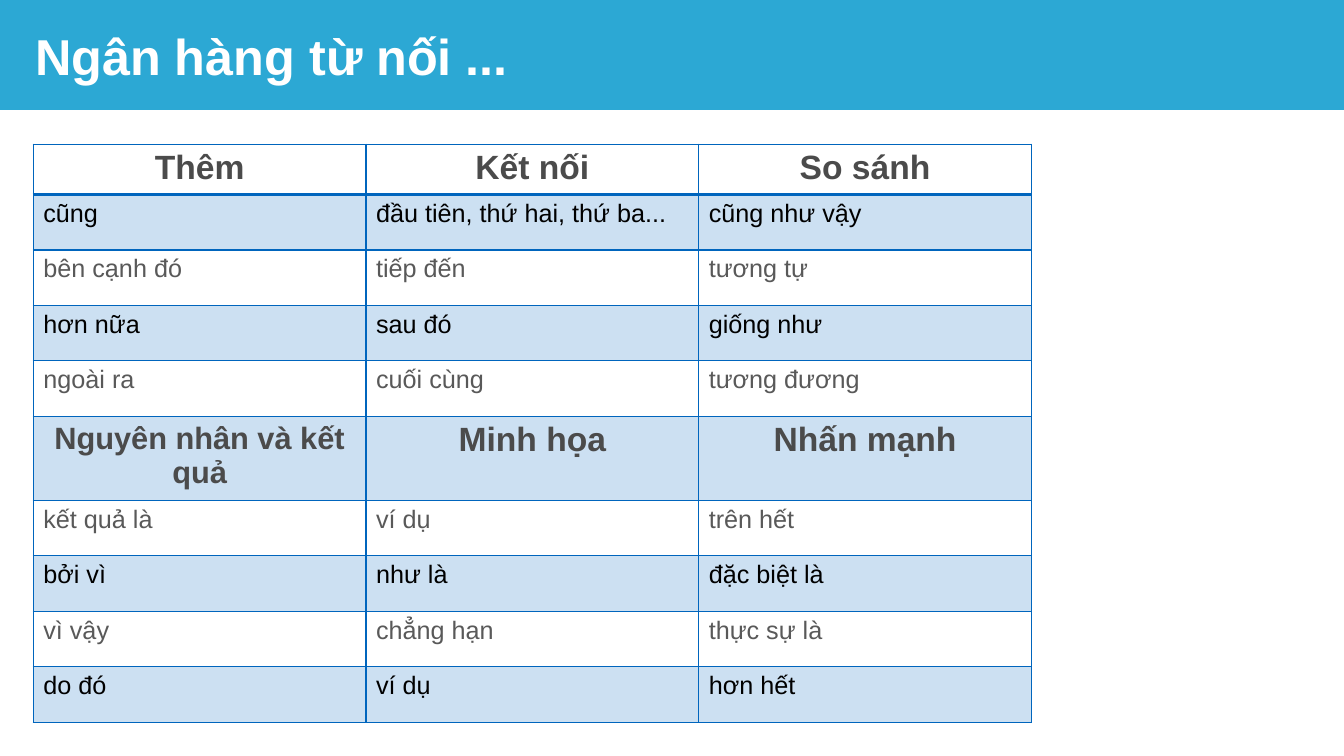
from lxml import etree
from pptx import Presentation
from pptx.dml.color import RGBColor
from pptx.enum.shapes import MSO_SHAPE
from pptx.enum.text import MSO_ANCHOR, PP_ALIGN
from pptx.oxml.ns import qn
from pptx.util import Inches, Pt

RECTANGLE = MSO_SHAPE.RECTANGLE
MIDDLE = MSO_ANCHOR.MIDDLE
LEFT, CENTER = PP_ALIGN.LEFT, PP_ALIGN.CENTER

SLIDE_W, SLIDE_H = 13.33, 7.5
BANNER_H = 1.09
TABLE_LEFT, TABLE_TOP, COLUMN_W = 0.33, 1.43, 3.3
TOP_HEADING_H, WORD_H, MIDDLE_HEADING_H = 0.47, 0.55, 0.78

COLORS = {
    "banner": "2CA8D4",
    "title": "FFFFFF",
    "heading": "4B4B4B",
    "word": "595959",
    "band_word": "000000",
    "band": "CCE0F2",
    "border": "0065BD",
}

WORD_BANK = [
    ["Thêm", "Kết nối", "So sánh"],
    ["cũng", "đầu tiên, thứ hai, thứ ba...", "cũng như vậy"],
    ["bên cạnh đó", "tiếp đến", "tương tự"],
    ["hơn nữa", "sau đó", "giống như"],
    ["ngoài ra", "cuối cùng", "tương đương"],
    ["Nguyên nhân và kết quả", "Minh họa", "Nhấn mạnh"],
    ["kết quả là", "ví dụ", "trên hết"],
    ["bởi vì", "như là", "đặc biệt là"],
    ["vì vậy", "chẳng hạn", "thực sự là"],
    ["do đó", "ví dụ", "hơn hết"],
]
HEADING_HEIGHTS = {0: TOP_HEADING_H, 5: MIDDLE_HEADING_H}
LONG_HEADING = "Nguyên nhân và kết quả"


def rgb(name):
    return RGBColor.from_string(COLORS[name])


def write(frame, text, size=18, color="word", bold=False, align=LEFT):
    frame.word_wrap = True
    paragraph = frame.paragraphs[0]
    paragraph.alignment = align
    run = paragraph.add_run()
    run.text = text
    run.font.name = "Arial"
    run.font.size = Pt(size)
    run.font.bold = bold
    run.font.color.rgb = rgb(color)


def add_banner(slide):
    banner = slide.shapes.add_shape(
        RECTANGLE, 0, 0, Inches(SLIDE_W), Inches(BANNER_H))
    banner.shadow.inherit = False
    banner.fill.solid()
    banner.fill.fore_color.rgb = rgb("banner")
    banner.line.fill.background()


def add_title(slide, text):
    title = slide.shapes.add_textbox(
        Inches(0.25), Inches(0.12), Inches(12.93), Inches(0.85))
    title.text_frame.vertical_anchor = MIDDLE
    write(title.text_frame, text, size=36, color="title", bold=True)


def set_borders(cell, bottom_width):
    properties = cell._tc.get_or_add_tcPr()
    widths = {"a:lnL": 1, "a:lnR": 1, "a:lnT": 1, "a:lnB": bottom_width}
    # Border elements must come before the cell fill
    for position, (side, width) in enumerate(widths.items()):
        border = etree.Element(qn(side), w=str(Pt(width)))
        fill = etree.SubElement(border, qn("a:solidFill"))
        etree.SubElement(fill, qn("a:srgbClr"), val=COLORS["border"])
        properties.insert(position, border)


def fill_cell(cell, text, is_heading, is_band):
    if is_band:
        cell.fill.solid()
        cell.fill.fore_color.rgb = rgb("band")
    else:
        cell.fill.background()
    if is_heading:
        size = 22 if text == LONG_HEADING else 24
        write(cell.text_frame, text, size=size, color="heading",
              bold=True, align=CENTER)
    else:
        write(cell.text_frame, text, color="band_word" if is_band else "word")


def add_word_bank(slide):
    heights = [HEADING_HEIGHTS.get(row, WORD_H) for row in range(len(WORD_BANK))]
    columns = len(WORD_BANK[0])
    table = slide.shapes.add_table(
        len(WORD_BANK), columns, Inches(TABLE_LEFT), Inches(TABLE_TOP),
        Inches(COLUMN_W * columns), Inches(sum(heights))).table
    table.first_row = table.horz_banding = False
    for column in table.columns:
        column.width = Inches(COLUMN_W)
    for row, words in enumerate(WORD_BANK):
        table.rows[row].height = Inches(heights[row])
        for column, word in enumerate(words):
            cell = table.cell(row, column)
            fill_cell(cell, word, row in HEADING_HEIGHTS, row % 2 == 1)
            set_borders(cell, bottom_width=2 if row == 0 else 1)


def main():
    deck = Presentation()
    deck.slide_width, deck.slide_height = Inches(SLIDE_W), Inches(SLIDE_H)
    slide = deck.slides.add_slide(deck.slide_layouts[6])

    # Title band
    add_banner(slide)
    add_title(slide, "Ngân hàng từ nối ...")

    # Linking words, grouped by purpose
    add_word_bank(slide)

    deck.save("out.pptx")


if __name__ == "__main__":
    main()
